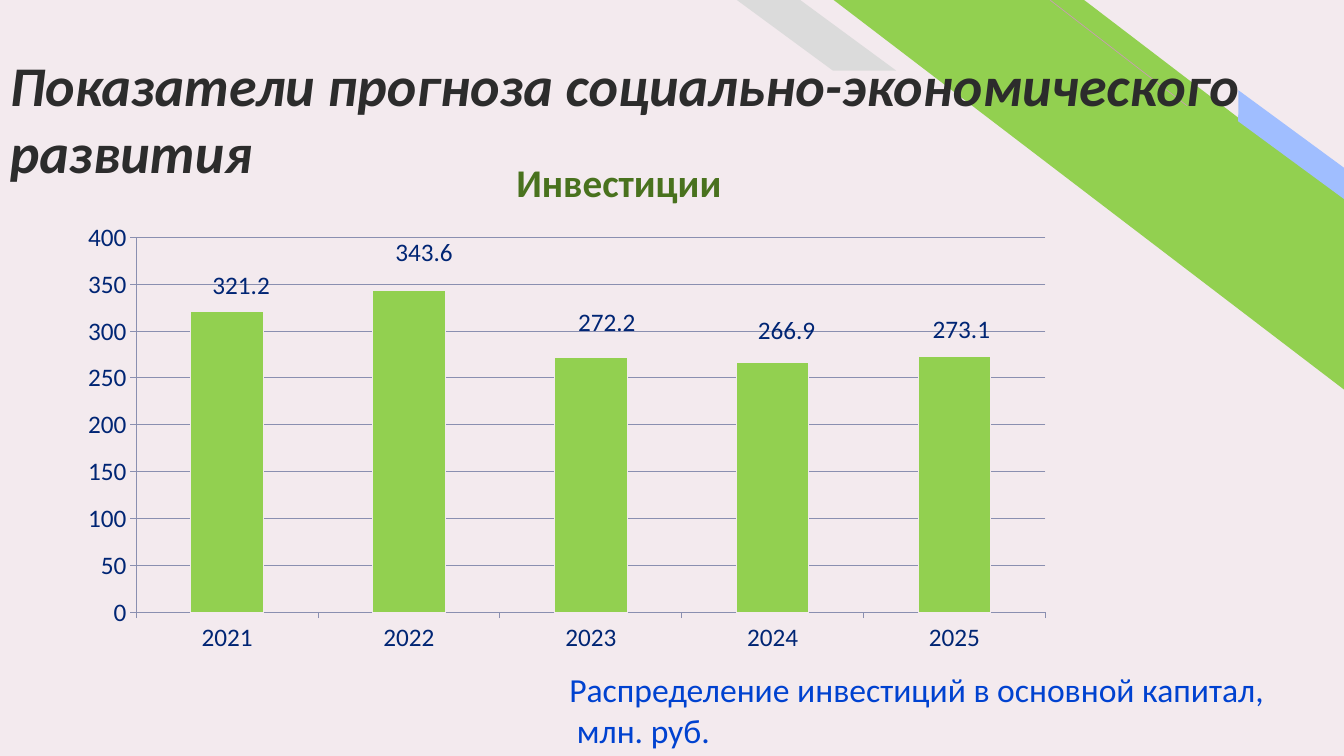
import pptx
import pptx.chart.data
import pptx.dml.color
import pptx.enum.chart
import pptx.enum.shapes
import pptx.enum.text
import pptx.oxml
import pptx.oxml.ns
import pptx.util

Pt = pptx.util.Pt
RGBColor = pptx.dml.color.RGBColor
SHAPE = pptx.enum.shapes.MSO_SHAPE
CHART = pptx.enum.chart
qn = pptx.oxml.ns.qn

BACKGROUND = RGBColor(0xF3, 0xEA, 0xEE)
GREEN = RGBColor(0x92, 0xD0, 0x50)
DARK_GREEN = RGBColor(0x49, 0x72, 0x1E)
LIGHT_BLUE = RGBColor(0xA0, 0xBE, 0xFF)
GREY = RGBColor(0xDB, 0xDB, 0xDB)
ROSE = RGBColor(0xC8, 0x9E, 0xB1)
BLUE = RGBColor(0x00, 0x42, 0xD0)
NAVY = RGBColor(0x00, 0x25, 0x74)
AXIS = RGBColor(0x8A, 0x8F, 0xB0)
INK = RGBColor(0x2C, 0x2C, 0x2C)


def style(tf, size, color, bold=False, italic=False):
    for p in tf.paragraphs:
        for r in p.runs:
            r.font.name = "Calibri"
            r.font.size = Pt(size)
            r.font.color.rgb = color
            r.font.bold = bold
            r.font.italic = italic


def manual_layout(x, y, w=None, h=None):
    """Build a chart layout from percentages of the chart area."""
    parts = ""
    if w is not None:
        parts = ('<c:layoutTarget val="inner"/>'
                 '<c:xMode val="edge"/><c:yMode val="edge"/>')
    for tag, value in zip("xywh", (x, y, w, h)):
        if value is not None:
            parts += f'<c:{tag} val="{value / 100:.4f}"/>'
    return pptx.oxml.parse_xml(
        f'<c:layout {pptx.oxml.ns.nsdecls("c")}>'
        f'<c:manualLayout>{parts}</c:manualLayout></c:layout>')


prs = pptx.Presentation()
prs.slide_width, prs.slide_height = Pt(960), Pt(540)
s = prs.slides.add_slide(prs.slide_layouts[5])
s.background.fill.solid()
s.background.fill.fore_color.rgb = BACKGROUND

# Corner decoration, mirrored left to right
stripes = [
    (SHAPE.DIAGONAL_STRIPE, 595.5, 0, 365, 278.6, 0.51, 0, GREEN),
    (SHAPE.PARALLELOGRAM, 869, 94.3, 106.6, 18, 0.72, 36.3, LIGHT_BLUE),
    (SHAPE.PARALLELOGRAM, 526.3, 0, 113.8, 50.4, 1.36, 0, GREY),
]
for kind, x, y, w, h, adj, angle, color in stripes:
    sp = s.shapes.add_shape(kind, Pt(x), Pt(y), Pt(w), Pt(h))
    sp.adjustments[0] = adj
    sp.rotation = angle
    sp._element.spPr.find(qn("a:xfrm")).set("flipH", "1")
    sp.shadow.inherit = False
    sp.fill.solid()
    sp.fill.fore_color.rgb = color
    sp.line.fill.background()

line = s.shapes.add_connector(pptx.enum.shapes.MSO_CONNECTOR.STRAIGHT,
                              Pt(848), Pt(75.6), Pt(750), Pt(0))
line.line.color.rgb = ROSE
line.line.width = Pt(0.5)
line._element.spPr.append(pptx.oxml.parse_xml(
    f'<a:effectLst {pptx.oxml.ns.nsdecls("a")}/>'))

# Chart title
title = s.shapes.title
title.left, title.top, title.width, title.height = Pt(262), Pt(89.3), Pt(360), Pt(57.6)
tf = title.text_frame
tf.text = "Инвестиции"
tf.margin_bottom = 0
tf.vertical_anchor = pptx.enum.text.MSO_ANCHOR.BOTTOM
tf.paragraphs[0].alignment = pptx.enum.text.PP_ALIGN.CENTER
tf.paragraphs[0].line_spacing = 0.9
style(tf, 28, DARK_GREEN, bold=True)

# Investment chart
data = pptx.chart.data.CategoryChartData()
data.categories = ["2021", "2022", "2023", "2024", "2025"]
data.add_series("Series 1", [321.2, 343.6, 272.2, 266.9, 273.1])
chart = s.shapes.add_chart(CHART.XL_CHART_TYPE.COLUMN_STACKED, Pt(48.2), Pt(152.6),
                           Pt(712.8), Pt(320.4), data).chart
chart.has_title = False
chart.has_legend = False
chart.font.name = "Calibri"
chart.font.size = Pt(18)
chart.font.color.rgb = NAVY
plot_area = chart._chartSpace.chart.plotArea
for old in plot_area.findall(qn("c:layout")):
    plot_area.remove(old)
plot_area.insert(0, manual_layout(6.9, 5.3, 91.1, 83.6))

plot = chart.plots[0]
plot.gap_width = 150
plot.overlap = 100
plot.vary_by_categories = False
for axis in (chart.category_axis, chart.value_axis):
    axis.major_tick_mark = CHART.XL_TICK_MARK.OUTSIDE
    axis.format.line.color.rgb = AXIS
chart.value_axis.minimum_scale = 0
chart.value_axis.maximum_scale = 400
chart.value_axis.major_unit = 50
chart.value_axis.has_major_gridlines = True
chart.value_axis.major_gridlines.format.line.color.rgb = AXIS

series = plot.series[0]
series.format.fill.solid()
series.format.fill.fore_color.rgb = GREEN
series.format.line.color.rgb = BACKGROUND

# Value labels, moved from the bar centres to above the bars
label_shifts = [(1.4, -39.3), (1.5, -44.2), (1.6, -36.1), (1.4, -34.9), (0.7, -34.4)]
for i in range(len(label_shifts)):
    series.points[i].data_label.position = CHART.XL_LABEL_POSITION.CENTER
for label, shift in zip(series._element.iter(qn("c:dLbl")), label_shifts):
    label.insert(1, manual_layout(*shift))

# No leader lines between bars and labels
labels = series._element.find(qn("c:dLbls"))
for leader in labels.findall(qn("c:showLeaderLines")):
    leader.set("val", "0")
labels.append(pptx.oxml.parse_xml(
    f'<c:extLst {pptx.oxml.ns.nsdecls("c")}>'
    '<c:ext uri="{CE6537A1-D6FC-4f65-9D91-7224C49458BB}" '
    'xmlns:c15="http://schemas.microsoft.com/office/drawing/2012/chart">'
    '<c15:showLeaderLines val="0"/></c:ext></c:extLst>'))

# Caption and slide heading
texts = [
    (399.6, 474.5, 560, 65.5, "Распределение инвестиций в основной капитал,\n млн. руб.",
     24, BLUE, False),
    (0, 32.4, 942.5, 126, "Показатели прогноза социально-экономического развития",
     40, INK, True),
]
for x, y, w, h, text, size, color, heavy in texts:
    tf = s.shapes.add_textbox(Pt(x), Pt(y), Pt(w), Pt(h)).text_frame
    tf.word_wrap = True
    tf.text = text
    style(tf, size, color, bold=heavy, italic=heavy)

prs.save("out.pptx")
